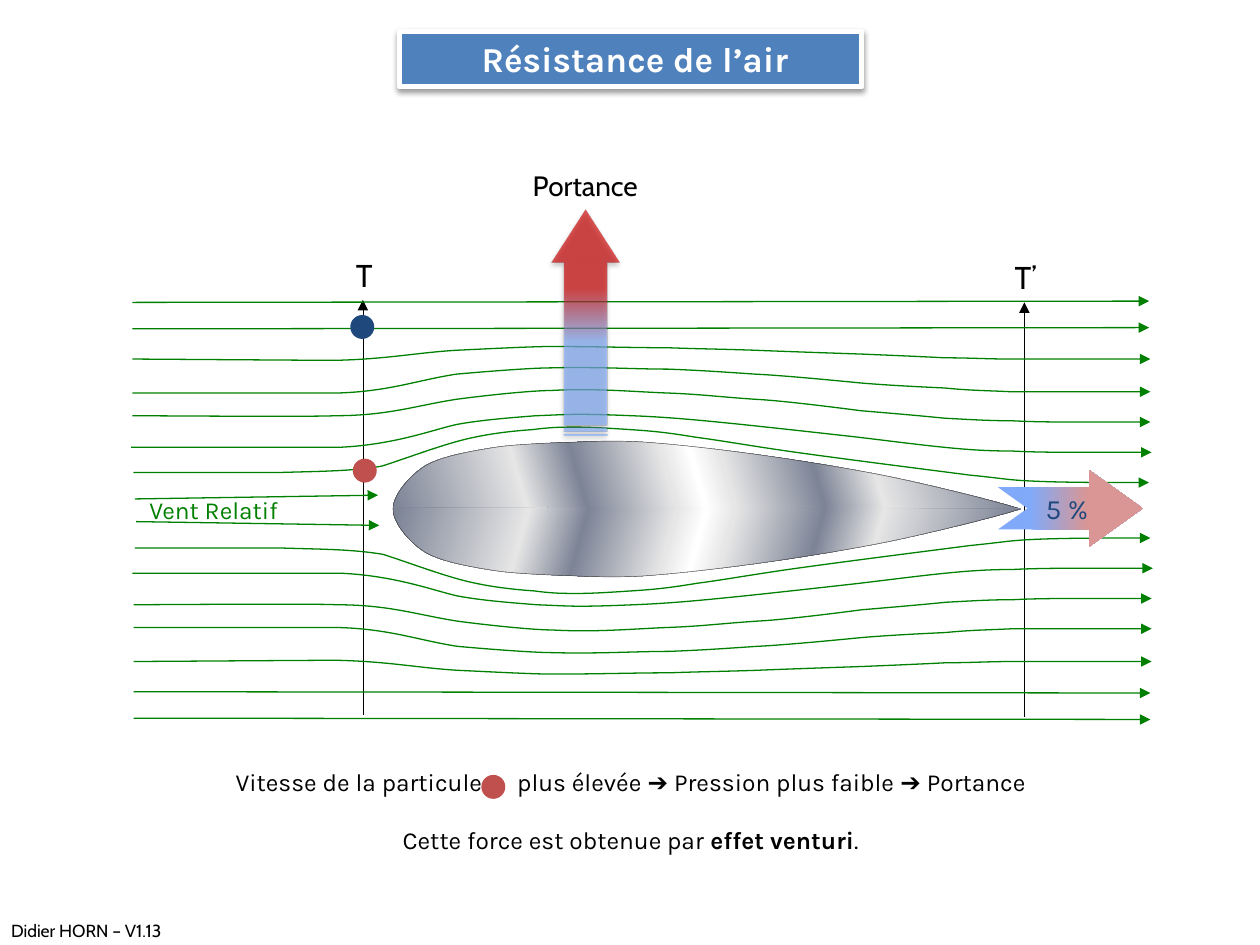
from dataclasses import dataclass
from math import cos, radians, sin
from typing import NamedTuple

from lxml import etree
from pptx import Presentation
from pptx.dml.color import RGBColor
from pptx.enum.shapes import MSO_CONNECTOR, MSO_SHAPE
from pptx.enum.text import MSO_ANCHOR, PP_ALIGN
from pptx.oxml.ns import qn
from pptx.util import Inches, Pt

CENTER, LEFT = PP_ALIGN.CENTER, PP_ALIGN.LEFT
TOP = MSO_ANCHOR.TOP
STRAIGHT = MSO_CONNECTOR.STRAIGHT
RECTANGLE, OVAL = MSO_SHAPE.RECTANGLE, MSO_SHAPE.OVAL
NOTCHED_ARROW, STRIPED_ARROW = MSO_SHAPE.NOTCHED_RIGHT_ARROW, MSO_SHAPE.STRIPED_RIGHT_ARROW


@dataclass(frozen=True)
class Theme:
    black: str = "000000"
    white: str = "FFFFFF"
    stream: str = "008000"
    navy: str = "1F497D"
    title: str = "4F81BD"
    particle: str = "C0504D"
    wing_edge: str = "404040"
    silver: str = "E6E6E6"
    steel: str = "7D8496"
    sky: str = "80AAF9"
    drag: str = "D99694"
    lift: str = "CC0000"
    body_font: str = "Karla"
    label_font: str = "Cabin"
    symbol_font: str = "Arial"
    footer_size: int = 10
    body_size: int = 14
    label_size: int = 16
    station_size: int = 18
    title_size: int = 20


class Box(NamedTuple):
    left: float
    top: float
    width: float
    height: float


class Piece(NamedTuple):
    text: str
    font: str
    bold: bool = False
    spacing: int = 0


class Curve(NamedTuple):
    bends: list  # anchor, then three points for each Bézier segment
    lead: tuple = ()  # starts of straight parts before and ends after the bends
    tail: tuple = ()


THEME = Theme()
FLOW_AXIS, WING_AXIS = 4.05, 4.04
MIRROR_SHIFT = 0.01

# Streamlines above the wing; those below are their mirror image
OUTER_X = (1.05, 1.12, 2.51, 2.66, 3.08, 3.3, 3.62, 3.84, 4.22, 4.37, 4.73, 5.03, 5.3,
           5.57, 5.7, 6, 6.23, 6.83, 6.83, 7.07, 7.3, 7.5, 7.7, 7.84, 8.03, 8.22, 8.42, 8.63)
OUTER_Y = (
    (3.3, 3.3, 3.31, 3.3, 3.3, 3.22, 3.17, 3.14, 3.1, 3.1, 3.08, 3.11, 3.12, 3.13,
     3.15, 3.17, 3.18, 3.26, 3.26, 3.28, 3.3, 3.32, 3.33, 3.34, 3.34, 3.35, 3.35, 3.35),
    (3.12, 3.12, 3.12, 3.12, 3.11, 3.02, 2.97, 2.95, 2.92, 2.92, 2.91, 2.93, 2.93, 2.94,
     2.95, 2.97, 2.98, 3.04, 3.04, 3.06, 3.07, 3.08, 3.1, 3.1, 3.11, 3.11, 3.11, 3.11),
    (2.85, 2.85, 2.86, 2.86, 2.85, 2.8, 2.78, 2.77, 2.75, 2.75, 2.75, 2.76, 2.76, 2.77,
     2.77, 2.78, 2.79, 2.81, 2.81, 2.82, 2.83, 2.84, 2.84, 2.85, 2.85, 2.85, 2.85, 2.85),
)
STREAMLINES = [
    Curve([(2.23, 3.75), (2.56, 3.74), (2.79, 3.74), (3.03, 3.7), (3.19, 3.65), (3.48, 3.54),
           (3.68, 3.49), (3.88, 3.44), (4.08, 3.42), (4.23, 3.41), (4.38, 3.39), (4.45, 3.39),
           (4.58, 3.39), (4.7, 3.39), (4.85, 3.4), (5, 3.41), (5.16, 3.42), (5.28, 3.43),
           (5.52, 3.47), (5.75, 3.5), (6.02, 3.55), (6.39, 3.6), (6.75, 3.65), (7.38, 3.73),
           (7.69, 3.77), (7.99, 3.8), (7.99, 3.81), (8.23, 3.82), (8.47, 3.83), (8.94, 3.83),
           (9.12, 3.83)], lead=((1.06, 3.75),)),
    Curve([(2.7, 3.55), (3.13, 3.53), (3.44, 3.41), (3.62, 3.37), (3.83, 3.33), (4.13, 3.31),
           (4.25, 3.3), (4.52, 3.29), (4.54, 3.28), (5.02, 3.3), (5.28, 3.31), (5.5, 3.33),
           (5.8, 3.36), (6.1, 3.39), (6.81, 3.47), (6.81, 3.47), (7.06, 3.5), (7.29, 3.53),
           (7.49, 3.55), (7.69, 3.57), (7.84, 3.58), (8.03, 3.58), (8.22, 3.59), (8.42, 3.59),
           (8.63, 3.59)], lead=((1.04, 3.55),), tail=((9.14, 3.59),)),
] + [Curve(list(zip(OUTER_X, heights)), tail=((9.13, heights[-1]),)) for heights in OUTER_Y]
STRAIGHT_FLOWS = [((1.05, 2.61), (9.12, 2.6)), ((1.05, 2.4), (9.12, 2.39)), ((1.07, 3.96), (3, 3.93))]
WING_TOP = [(3.12, 4.05), (3.11, 3.95), (3.23, 3.79), (3.37, 3.7), (3.5, 3.62), (3.74, 3.58),
            (3.93, 3.55), (4.13, 3.52), (4.54, 3.51), (4.54, 3.51), (4.55, 3.51), (4.86, 3.49),
            (5.13, 3.51), (5.41, 3.53), (5.83, 3.58), (6.17, 3.63), (6.51, 3.68), (6.87, 3.74),
            (7.19, 3.81), (7.51, 3.88), (7.95, 3.99), (8.1, 4.04)]
METAL = list(zip((0, 8, 26, 34, 46, 50, 54, 66, 74, 92, 100),
                 (THEME.silver, THEME.steel) * 2 + (THEME.silver, THEME.white)
                 + (THEME.silver, THEME.steel) * 2 + (THEME.silver,)))


def mirrored(points, axis: float, shift: float = 0) -> list:
    return [(x + shift, 2 * axis - y) for x, y in points]


def rotated(points, degrees: float) -> list:
    c, s = cos(radians(degrees)), sin(radians(degrees))
    return [(x * c - y * s, x * s + y * c) for x, y in points]


def style_line(shape, color: str, width: float, arrow: bool = False, dash: str = "") -> None:
    shape.line.color.rgb = RGBColor.from_string(color)
    shape.line.width = Pt(width)
    outline = shape.line._get_or_add_ln()
    if dash:
        etree.SubElement(outline, qn("a:prstDash"), val=dash)
    if arrow:
        etree.SubElement(outline, qn("a:round"))
        etree.SubElement(outline, qn("a:tailEnd"), type="triangle")


def fill_gradient(shape, stops: list, angle: int = 0, alpha: int = 100) -> None:
    shape.fill.solid()
    gradient = etree.Element(qn("a:gradFill"), rotWithShape="1")
    stop_list = etree.SubElement(gradient, qn("a:gsLst"))
    for position, color in stops:
        stop = etree.SubElement(stop_list, qn("a:gs"), pos=str(position * 1000))
        tint = etree.SubElement(stop, qn("a:srgbClr"), val=color)
        if alpha < 100:
            etree.SubElement(tint, qn("a:alpha"), val=str(alpha * 1000))
    etree.SubElement(gradient, qn("a:lin"), ang=str(angle * 60000), scaled="0")
    properties = shape._element.spPr
    properties.replace(properties.find(qn("a:solidFill")), gradient)


def add_shadow(shape, alpha: int, blur: float, distance: float) -> None:
    effects = shape._element.spPr.find(qn("a:effectLst"))
    shadow = etree.SubElement(effects, qn("a:outerShdw"), blurRad=str(Pt(blur)), dist=str(Pt(distance)),
                              dir="5400000", algn="ctr", rotWithShape="0")
    color = etree.SubElement(shadow, qn("a:srgbClr"), val=THEME.black)
    etree.SubElement(color, qn("a:alpha"), val=str(alpha * 1000))


def add_curve(page, curve: Curve):
    points = [(Inches(x), Inches(y)) for x, y in (*curve.lead, *curve.bends, *curve.tail)]
    builder = page.shapes.build_freeform(*points[0], scale=1.0)
    builder.add_line_segments(points[1:], close=False)
    shape = builder.convert_to_shape()
    shape.shadow.inherit = False
    # Join each three points of the bends into one Bézier segment
    route = shape._element.spPr.find(".//" + qn("a:path"))
    steps = route.findall(qn("a:lnTo"))[len(curve.lead):][:len(curve.bends) - 1]
    for first in range(0, len(steps), 3):
        bend = etree.Element(qn("a:cubicBezTo"))
        steps[first].addprevious(bend)
        for step in steps[first:first + 3]:
            bend.append(step[0])
            route.remove(step)
    return shape


def add_stream(page, curve: Curve) -> None:
    shape = add_curve(page, curve)
    shape.fill.background()
    style_line(shape, THEME.stream, 0.75, arrow=True)


def add_wing_half(page, outline: list, rotation: float) -> None:
    """Draw the outline level, then turn it so that the metal shading turns too."""
    half = add_curve(page, Curve(rotated(outline, -rotation)))
    middle = (half.left + half.width / 2, half.top + half.height / 2)
    x, y = rotated([middle], rotation)[0]
    half.left, half.top = int(x - half.width / 2), int(y - half.height / 2)
    half.rotation = rotation
    fill_gradient(half, METAL)
    style_line(half, THEME.wing_edge, 0.25)


def add_arrow_line(page, start: tuple, end: tuple, color: str, width: float, dash: str = "") -> None:
    line = page.shapes.add_connector(STRAIGHT, *map(Inches, start + end))
    style_line(line, color, width, arrow=True, dash=dash)
    etree.SubElement(line._element.spPr, qn("a:effectLst"))


def add_block(page, kind, box: Box, color: str):
    shape = page.shapes.add_shape(kind, *map(Inches, box))
    shape.shadow.inherit = False
    shape.fill.solid()
    shape.fill.fore_color.rgb = RGBColor.from_string(color)
    shape.line.fill.background()
    return shape


def write(shape, pieces: list, size: int, color: str, align=CENTER, wrap: bool = True):
    frame = shape.text_frame
    frame.word_wrap, frame.vertical_anchor = wrap, TOP
    para = frame.paragraphs[0]
    para.alignment = align
    for piece in pieces:
        span = para.add_run()
        span.text = piece.text
        span.font.name, span.font.size, span.font.bold = piece.font, Pt(size), piece.bold
        span.font.color.rgb = RGBColor.from_string(color)
        if piece.spacing:
            span.font._element.set("spc", str(piece.spacing))
    return para


def add_label(page, box: Box, text: str, font: str, size: int, color: str, align=CENTER, wrap=True) -> None:
    shape = page.shapes.add_textbox(*map(Inches, box))
    write(shape, [Piece(text, font)], size, color, align, wrap)


def add_particle(page, left: float, top: float, color: str) -> None:
    add_block(page, OVAL, Box(left, top, 0.19, 0.19), color)


def main() -> None:
    deck = Presentation()
    deck.slide_width, deck.slide_height = Inches(10), Inches(7.5)
    page = deck.slides.add_slide(deck.slide_layouts[6])
    body, label = THEME.body_font, THEME.label_font

    # Footer
    add_label(page, Box(-0.01, 7.25, 1.5, 0.27), "Didier HORN – V1.13 ©", label,
              THEME.footer_size, THEME.black, LEFT, wrap=False)

    # Stations T and T’
    for text, x, top in (("T’", 8.13, 2), ("T", 2.88, 1.98)):
        add_arrow_line(page, (x, top + 3.69), (x, top + 0.4), THEME.black, 0.25, "sysDot")
        add_label(page, Box(x - 0.38, top, 0.78, 0.4), text, label, THEME.station_size, THEME.black)

    # Air flow above and below the wing
    for stream in STREAMLINES:
        add_stream(page, stream)
        add_stream(page, Curve(*(mirrored(part, FLOW_AXIS, MIRROR_SHIFT) for part in stream)))
    for flow in STRAIGHT_FLOWS:
        for start, end in (flow, mirrored(flow, FLOW_AXIS, MIRROR_SHIFT)):
            add_arrow_line(page, start, end, THEME.stream, 0.75)

    # Wing halves
    add_wing_half(page, WING_TOP, -16)
    add_wing_half(page, mirrored(WING_TOP, WING_AXIS), 15.6)

    # Wind label, drag arrow and particles
    add_label(page, Box(0.62, 3.88, 2.15, 0.34), "Vent Relatif", body, THEME.body_size, THEME.stream)
    drag = add_block(page, NOTCHED_ARROW, Box(7.92, 3.73, 1.15, 0.61), THEME.drag)
    drag.adjustments[0], drag.adjustments[1] = 0.55, 0.7
    fill_gradient(drag, [(22, THEME.sky), (62, THEME.drag)])
    add_label(page, Box(8.2, 3.85, 0.88, 0.37), "5 %", body, THEME.label_size, THEME.navy, LEFT)
    add_particle(page, 2.8, 3.64, THEME.particle)
    add_particle(page, 2.78, 2.5, THEME.navy)

    # Explanations; the widened space leaves room for the particle
    speed = [Piece("Vitesse de la particule", body), Piece(" ", body, spacing=1650),
             Piece("plus élevée ", body), Piece("➔", THEME.symbol_font),
             Piece(" Pression plus faible ", body), Piece("➔", THEME.symbol_font), Piece(" Portance", body)]
    venturi = [Piece("Cette force est obtenue par ", body), Piece("effet venturi", body, True), Piece(".", body)]
    for top, pieces in ((6.04, speed), (6.5, venturi)):
        band = add_block(page, RECTANGLE, Box(0.42, top, 9.17, 0.38), THEME.white)
        write(band, pieces, THEME.body_size, THEME.black)
    add_particle(page, 3.82, 6.15, THEME.particle)

    # Lift arrow
    lift = add_block(page, STRIPED_ARROW, Box(3.75, 2.29, 1.79, 0.54), THEME.lift)
    lift.rotation = 270
    lift.adjustments[0], lift.adjustments[1] = 0.63, 0.78
    fill_gradient(lift, [(35, THEME.lift), (58, THEME.sky)], angle=180, alpha=66)
    add_shadow(lift, 35, 3.1, 1.8)
    add_label(page, Box(3.79, 1.29, 1.71, 0.38), "Portance", label, THEME.label_size, THEME.black)

    # Title
    title = add_block(page, RECTANGLE, Box(3.17, 0.25, 3.67, 0.44), THEME.title)
    style_line(title, THEME.white, 3)
    add_shadow(title, 38, 3.1, 1.6)
    para = write(title, [Piece("Résistance de l’air", body, True)], THEME.title_size, THEME.white)
    para._p.get_or_add_pPr().set("marL", str(Inches(0.07)))

    deck.save("out.pptx")


if __name__ == "__main__":
    main()
